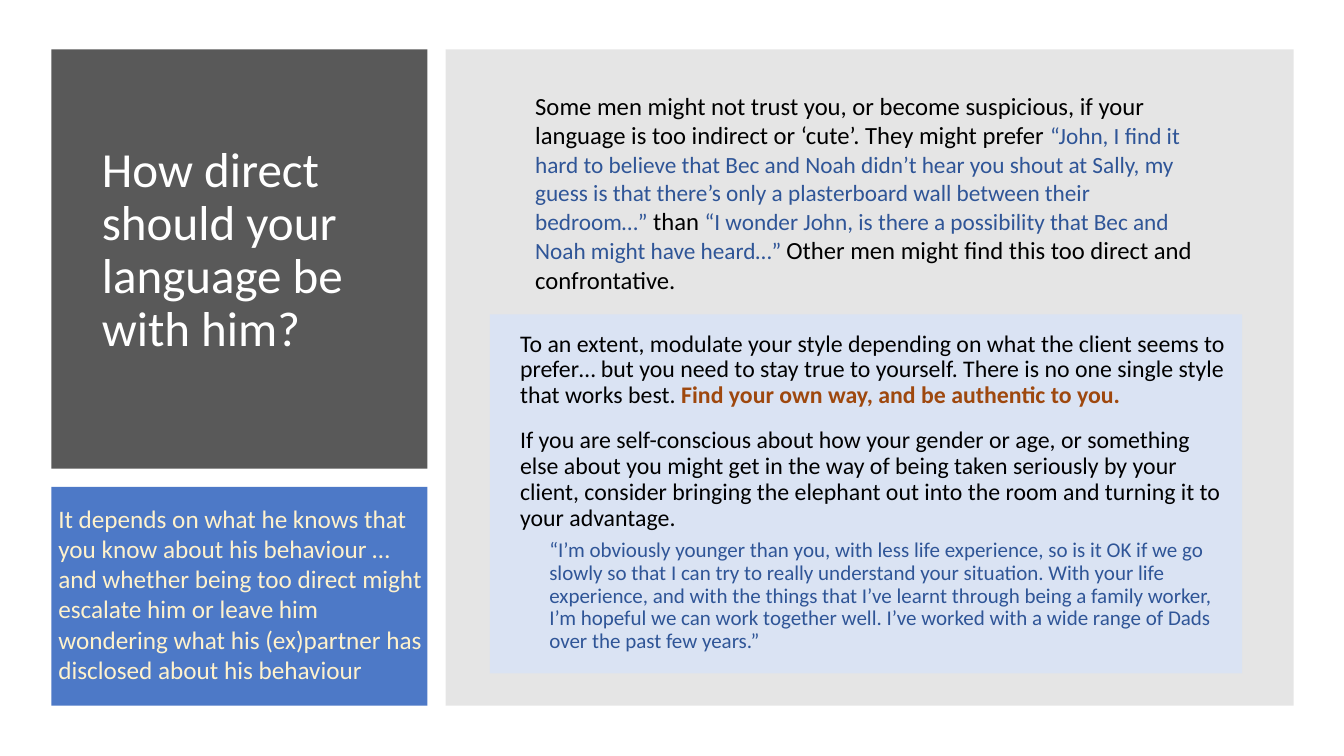
import pptx
import pptx.util
import pptx.dml.color
import pptx.enum.shapes
import pptx.enum.text
import pptx.oxml
import pptx.oxml.ns

Inches, Pt = pptx.util.Inches, pptx.util.Pt
RGBColor = pptx.dml.color.RGBColor
ANCHOR = pptx.enum.text.MSO_ANCHOR

# Colours
WHITE = RGBColor(0xFF, 0xFF, 0xFF)
BLACK = RGBColor(0, 0, 0)
CHARCOAL = RGBColor(0x59, 0x59, 0x59)
GREY = RGBColor(0x80, 0x80, 0x80)
BLUE = RGBColor(0x44, 0x72, 0xC4)
PALE_BLUE = RGBColor(0xDA, 0xE3, 0xF3)
QUOTE_BLUE = RGBColor(0x2F, 0x55, 0x97)
CREAM = RGBColor(0xFF, 0xF2, 0xCC)
RUST = RGBColor(0x9E, 0x48, 0x0E)

# Content: each paragraph is (format, runs); each run is (text, size, colour, bold)
TITLE = [({"line": 0.9}, [("How direct should your language be with him?", 35, WHITE, False)])]

TRUST = [({}, [
    ("Some men might not trust you, or become suspicious, if your language is too indirect "
     "or ‘cute’. They might prefer ", 17.6, BLACK, False),
    ("“John, I find it hard to believe that Bec and Noah didn’t hear you shout at Sally, my "
     "guess is that there’s only a plasterboard wall between their bedroom…”",
     16.6, QUOTE_BLUE, False),
    (" than ", 17.6, BLACK, False),
    ("“I wonder John, is there a possibility that Bec and Noah might have heard…” ",
     16.6, QUOTE_BLUE, False),
    ("Other men might find this too direct and confrontative.", 17.6, BLACK, False),
])]

DEPENDS = [({}, [
    ("It depends on what he knows that you know about his behaviour … and whether being too "
     "direct might escalate him or leave him wondering what his (ex)partner has disclosed "
     "about his behaviour", 18, CREAM, False),
])]

ADVICE = [
    ({"line": 0.9, "indent": 0.2}, [
        ("To an extent, modulate your style depending on what the client seems to prefer… but "
         "you need to stay true to yourself. There is no one single style that works best. ",
         17, BLACK, False),
        ("Find your own way, and be authentic to you.", 17, RUST, True),
    ]),
    ({"line": 0.9, "indent": 0.2, "before": 14, "after": 6}, [
        ("If you are self-conscious about how your gender or age, or something else about you "
         "might get in the way of being taken seriously by your client, consider bringing the "
         "elephant out into the room and turning it to your advantage.", 17, BLACK, False),
    ]),
    ({"line": 0.9, "indent": 0.49}, [
        ("“I’m obviously younger than you, with less life experience, so is it OK if we go "
         "slowly so that I can try to really understand your situation. With your life "
         "experience, and with the things that I’ve learnt through being a family worker, I’m "
         "hopeful we can work together well. I’ve worked with a wide range of Dads over the "
         "past few years.”", 15, QUOTE_BLUE, False),
    ]),
]

# Layout in inches
LEFT, TOP, RIGHT, BOTTOM = 0.51, 0.49, 12.83, 7.0
GAP = 0.18
SIDE_W, TITLE_H = 3.73, 4.16
LOWER_TOP = TOP + TITLE_H + GAP
MAIN_LEFT = LEFT + SIDE_W + GAP

PANELS = [  # left, top, width, height, colour, opacity in percent
    (LEFT, TOP, SIDE_W, TITLE_H, CHARCOAL, 100),
    (LEFT, LOWER_TOP, SIDE_W, BOTTOM - LOWER_TOP, BLUE, 95),
    (MAIN_LEFT, TOP, RIGHT - MAIN_LEFT, BOTTOM - TOP, GREY, 20),
    (4.86, 3.12, 7.46, 3.56, PALE_BLUE, 100),
]


def add_panel(slide, left, top, width, height, colour, opacity):
    panel = slide.shapes.add_shape(pptx.enum.shapes.MSO_SHAPE.RECTANGLE, Inches(left),
                                   Inches(top), Inches(width), Inches(height))
    panel.shadow.inherit = False
    panel.line.fill.background()
    panel.fill.solid()
    panel.fill.fore_color.rgb = colour
    if opacity < 100:
        rgb = panel.fill._xPr.find(".//" + pptx.oxml.ns.qn("a:srgbClr"))
        rgb.append(pptx.oxml.parse_xml(
            f'<a:alpha {pptx.oxml.ns.nsdecls("a")} val="{opacity * 1000}"/>'))
    return panel


def write(holder, paragraphs, anchor=ANCHOR.TOP, inset_top=0.05):
    frame = holder.text_frame
    frame.word_wrap = True
    frame.auto_size = pptx.enum.text.MSO_AUTO_SIZE.NONE
    frame.vertical_anchor = anchor
    frame.margin_left = frame.margin_right = Inches(0.1)
    frame.margin_top, frame.margin_bottom = Inches(inset_top), Inches(0.05)
    for i, (style, runs) in enumerate(paragraphs):
        paragraph = frame.add_paragraph() if i else frame.paragraphs[0]
        paragraph.alignment = pptx.enum.text.PP_ALIGN.LEFT
        paragraph.line_spacing = style.get("line", 1.0)
        paragraph.space_before = Pt(style.get("before", 0))
        paragraph.space_after = Pt(style.get("after", 0))
        if "indent" in style:
            paragraph._p.get_or_add_pPr().set("marL", str(Inches(style["indent"])))
        for text, size, colour, bold in runs:
            run = paragraph.add_run()
            run.text = text
            run.font.name, run.font.size, run.font.bold = "Calibri", Pt(size), bold
            run.font.color.rgb = colour


def add_text(slide, left, top, width, height, paragraphs, **style):
    box = slide.shapes.add_textbox(Inches(left), Inches(top), Inches(width), Inches(height))
    write(box, paragraphs, **style)


def main():
    deck = pptx.Presentation()
    deck.slide_width, deck.slide_height = Inches(13.33), Inches(7.5)
    slide = deck.slides.add_slide(deck.slide_layouts[5])

    # Panels
    panels = [add_panel(slide, *panel) for panel in PANELS]
    advice = panels[-1]

    # Title, raised above its panel
    title = slide.shapes.title
    title.left, title.top = Inches(0.91), Inches(0.72)
    title.width, title.height = Inches(3.11), Inches(3.54)
    write(title, TITLE, anchor=ANCHOR.MIDDLE)
    panels[0]._element.addnext(title._element)

    # Body texts
    add_text(slide, 5.21, 0.87, 6.83, 2.42, TRUST, inset_top=0.03)
    add_text(slide, 0.48, 4.94, 3.92, 1.92, DEPENDS)
    write(advice, ADVICE, inset_top=0.17)

    deck.save("out.pptx")


if __name__ == "__main__":
    main()
